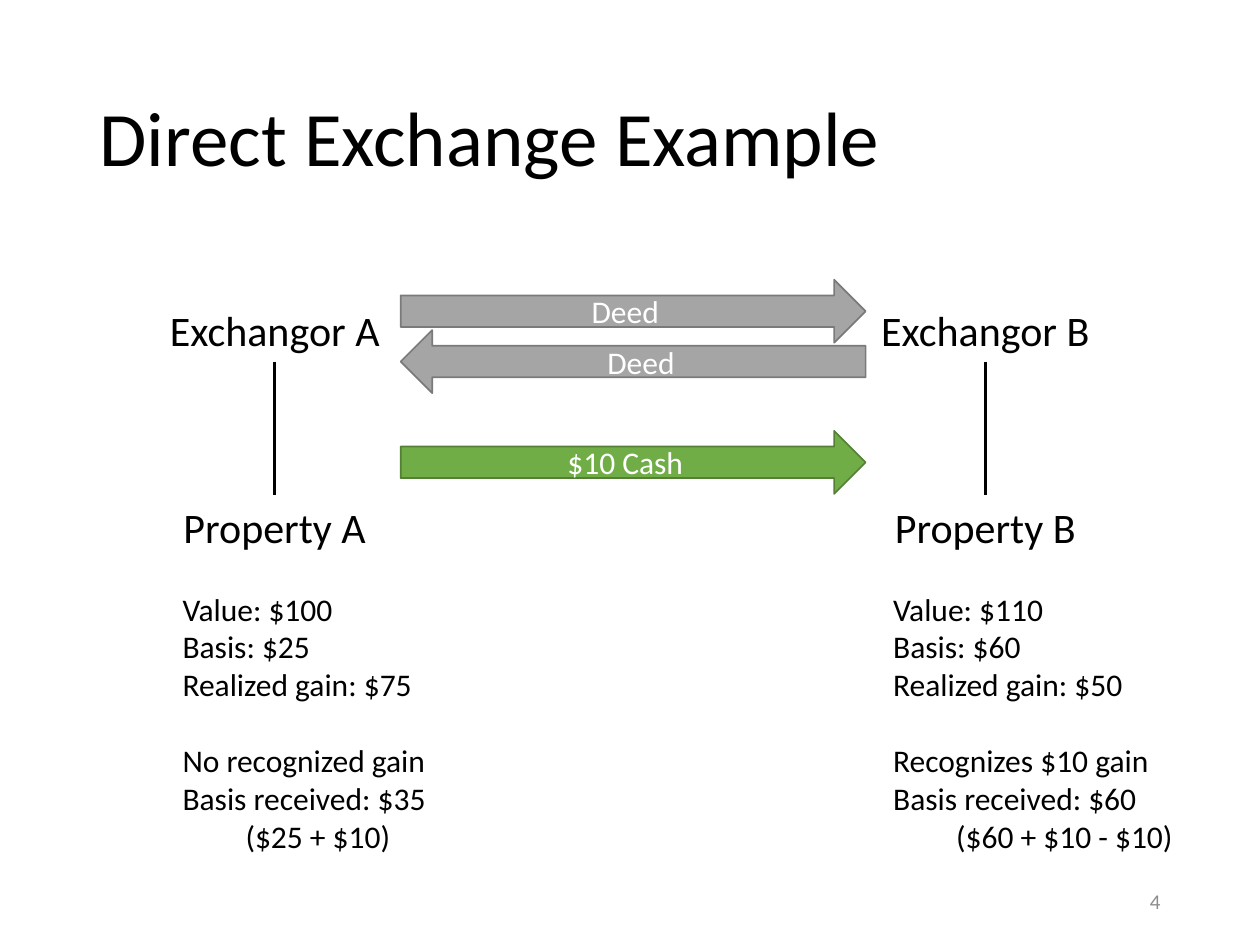
"""Build the direct exchange slide."""
from lxml import etree
from pptx import Presentation
from pptx import util as u
from pptx.dml.color import RGBColor
from pptx.enum import shapes, text
from pptx.oxml import ns

MID = text.PP_ALIGN.CENTER
LEFT = text.PP_ALIGN.LEFT
KIND = shapes.MSO_SHAPE


def rgb(code):
    """Turn a hex string into a colour."""
    return RGBColor.from_string(code)


def box(at):
    """Turn left, top, width and height into lengths."""
    return [u.Inches(n) for n in at]


def style(par, size, tone="000000", align=LEFT):
    """Set the font and alignment of a paragraph."""
    par.alignment = align
    par.font.name = "Calibri"
    par.font.size = u.Pt(size)
    par.font.color.rgb = rgb(tone)


def head(slide, words):
    """Fill and place the title."""
    title = slide.shapes.title
    title.left, title.top, title.width, title.height = box((0.69, 0.4, 8.62, 1.45))
    frame = title.text_frame
    frame.text = words
    frame.vertical_anchor = text.MSO_ANCHOR.MIDDLE
    par = frame.paragraphs[0]
    par.line_spacing = 0.9
    style(par, 44)


def label(slide, words, at, size=24, tone="000000", align=MID):
    """Add a text box that fits its lines."""
    item = slide.shapes.add_textbox(*box(at))
    frame = item.text_frame
    frame.text = words
    frame.word_wrap = False
    frame.auto_size = text.MSO_AUTO_SIZE.SHAPE_TO_FIT_TEXT
    for par in frame.paragraphs:
        style(par, size, tone, align)
    return item


def link(slide, top, low):
    """Join an exchangor to the property below."""
    line = slide.shapes.add_connector(shapes.MSO_CONNECTOR.STRAIGHT, 0, 0, 0, 0)
    line.begin_connect(top, 2)
    line.end_connect(low, 0)
    line.line.color.rgb = rgb("000000")
    line.line.width = u.Pt(1.5)
    etree.SubElement(line.element.spPr, ns.qn("a:effectLst"))


def arrow(slide, kind, words, top, fill, edge):
    """Add a labelled block arrow."""
    item = slide.shapes.add_shape(kind, *box((3.18, top, 3.69, 0.5)))
    item.shadow.inherit = False
    item.fill.solid()
    item.fill.fore_color.rgb = rgb(fill)
    item.line.color.rgb = rgb(edge)
    item.line.width = u.Pt(1)
    frame = item.text_frame
    frame.text = words
    frame.vertical_anchor = text.MSO_ANCHOR.MIDDLE
    style(frame.paragraphs[0], 18, "FFFFFF", MID)


def facts(slide, left, width, lines):
    """List the figures, with a gap before the outcome and an indented sum."""
    item = label(slide, "\n".join(lines), (left, 4.63, width, 2.22), 18, align=LEFT)
    pars = item.text_frame.paragraphs
    pars[3].space_before = u.Pt(22)
    pars[-1]._p.get_or_add_pPr().set("marL", str(u.Inches(0.5)))


def side(slide, name, mid, width, lines):
    """Draw one party with its property and figures."""
    top = label(slide, f"Exchangor {name}", (mid - 0.94, 2.37, 1.88, 0.5))
    low = label(slide, f"Property {name}", (mid - 0.83, 3.93, 1.66, 0.5))
    link(slide, top, low)
    facts(slide, mid - 0.83, width, lines)


def main():
    """Build and save the slide."""
    deck = Presentation()
    deck.slide_width, deck.slide_height = u.Inches(10), u.Inches(7.5)
    slide = deck.slides.add_slide(deck.slide_layouts[5])
    head(slide, "Direct Exchange Example")
    side(slide, "A", 2.18, 2.15, [
        "Value: $100", "Basis: $25", "Realized gain: $75",
        "No recognized gain", "Basis received: $35", "($25 + $10)"])
    side(slide, "B", 7.82, 2.45, [
        "Value: $110", "Basis: $60", "Realized gain: $50",
        "Recognizes $10 gain", "Basis received: $60", "($60 + $10 - $10)"])
    arrow(slide, KIND.RIGHT_ARROW, "$10 Cash", 3.42, "70AD47", "538035")
    arrow(slide, KIND.RIGHT_ARROW, "Deed", 2.22, "A5A5A5", "7A7A7A")
    arrow(slide, KIND.LEFT_ARROW, "Deed", 2.62, "A5A5A5", "7A7A7A")
    page = label(slide, "4", (7.06, 6.95, 2.25, 0.4), 12, "8C8C8C", text.PP_ALIGN.RIGHT)
    page.text_frame.auto_size = text.MSO_AUTO_SIZE.NONE
    page.text_frame.word_wrap = True
    page.text_frame.vertical_anchor = text.MSO_ANCHOR.MIDDLE
    deck.save("out.pptx")


if __name__ == "__main__":
    main()
